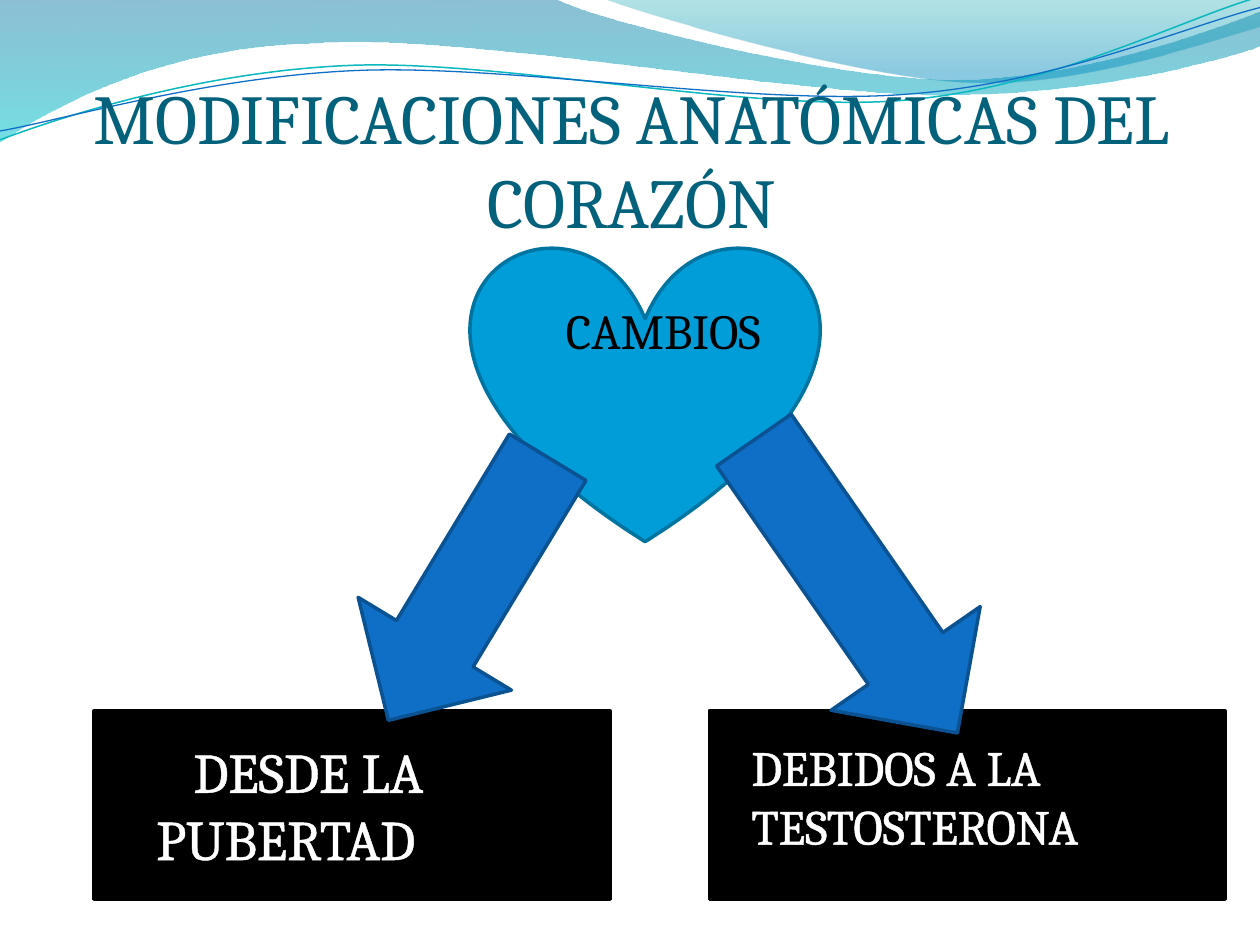
from lxml import etree
from pptx import Presentation
from pptx.dml import color as dml
from pptx.enum import shapes, text
from pptx.oxml import ns
from pptx.util import Cm, Pt

FONT = "Cambria"
HUES = {
    "title": "04617B", "heart": "009DD9", "rim": "0074A1",
    "arrow": "0F6FC6", "edge": "0B5292", "black": "000000",
    "white": "FFFFFF", "teal": "0AB8BF", "aqua": "00C6CF",
    "sea": "00A1A9", "sky": "008BBF",
}
SHAPE = shapes.MSO_SHAPE

BAND = [(0, 0), (4.4, -0.01), (4.76, 0.17, 6.64, 0.63, 7.58, 0.63),
        (8.53, 0.63, 9.58, 0.26, 10, 0.09), (10.01, 0.36),
        (9.83, 0.44, 8.7, 0.76, 7.46, 0.75),
        (6.22, 0.75, 3.82, 0.28, 2.57, 0.34),
        (1.29, 0.36, 0.46, 0.83, -0.01, 1.13), (0, 0)]
CREST = [(4.79, -0.01), (5.09, 0.11, 6.82, 0.62, 7.69, 0.65),
         (8.56, 0.69, 9.61, 0.32, 10, 0.21), (10, 0), (4.79, -0.01)]
HIGH = [(0, 1.11), (0.48, 0.93, 1.58, 0.57, 2.77, 0.52),
        (3.95, 0.47, 5.93, 0.89, 7.13, 0.8),
        (8.33, 0.71, 9.38, 0.15, 9.98, -0.02)]
LOW = [(0, 1.04), (0.47, 0.96, 1.64, 0.61, 2.83, 0.56),
       (4.03, 0.51, 5.97, 0.84, 7.17, 0.75),
       (8.36, 0.67, 9.41, 0.21, 10, 0.06)]


def rgb(name):
    return dml.RGBColor.from_string(HUES[name])


def bend(wave, parts):
    lines = iter(list(wave._element.iter(ns.qn("a:lnTo"))))
    for part in parts[1:]:
        first = next(lines)
        if len(part) == 6:
            first.tag = ns.qn("a:cubicBezTo")
            for _ in range(2):
                line = next(lines)
                first.append(line[0])
                line.getparent().remove(line)


def add_wave(slide, parts, close):
    dots = [(Cm(part[i] * 2.54), Cm(part[i + 1] * 2.54))
            for part in parts for i in range(0, len(part), 2)]
    pen = slide.shapes.build_freeform(*dots[0])
    pen.add_line_segments(dots[1:], close=close)
    wave = pen.convert_to_shape()
    bend(wave, parts)
    wave.shadow.inherit = False
    return wave


def add_band(slide, parts, stops):
    band = add_wave(slide, parts, True)
    band.line.fill.background()
    band.fill.gradient()
    band.fill.gradient_angle = 270
    for stop, (spot, hue, _) in zip(band.fill.gradient_stops, stops):
        stop.position = spot
        stop.color.rgb = rgb(hue)
    tints = band._element.spPr.iter(ns.qn("a:srgbClr"))
    for tint, (_, _, alpha) in zip(tints, stops):
        etree.SubElement(tint, ns.qn("a:alpha")).set("val", str(alpha * 1000))


def add_curve(slide, parts, hue, width):
    curve = add_wave(slide, parts, False)
    curve.fill.background()
    curve.line.color.rgb = rgb(hue)
    curve.line.width = Pt(width)


def add_form(slide, kind, box, fill, line, turn=0):
    form = slide.shapes.add_shape(kind, *map(Cm, box))
    form.shadow.inherit = False
    form.fill.solid()
    form.fill.fore_color.rgb = rgb(fill)
    form.line.color.rgb = rgb(line)
    form.line.width = Pt(2)
    form.rotation = turn


def set_font(para, size, hue):
    para.font.name = FONT
    para.font.size = Pt(size)
    para.font.color.rgb = rgb(hue)


def add_label(slide, words, box, size, hue, indent=0, rim=False):
    frame = slide.shapes.add_textbox(*map(Cm, box)).text_frame
    frame.word_wrap = True
    para = frame.paragraphs[0]
    run = para.add_run()
    run.text = words
    set_font(para, size, hue)
    if indent:
        para._p.get_or_add_pPr().set("indent", str(Cm(indent)))
    if rim:
        line = etree.Element(ns.qn("a:ln"), w=str(Pt(1.45)))
        fill = etree.SubElement(line, ns.qn("a:solidFill"))
        etree.SubElement(fill, ns.qn("a:srgbClr"), val=HUES[hue])
        run._r.get_or_add_rPr().insert(0, line)


def set_title(slide, words, box):
    title = slide.shapes.title
    title.left, title.top, title.width, title.height = map(Cm, box)
    frame = title.text_frame
    frame.text = words
    frame.word_wrap = True
    frame.auto_size = text.MSO_AUTO_SIZE.NONE
    frame.vertical_anchor = text.MSO_ANCHOR.BOTTOM
    frame.margin_left = frame.margin_right = frame.margin_bottom = 0
    para = frame.paragraphs[0]
    para.alignment = text.PP_ALIGN.CENTER
    set_font(para, 40, "title")
    slide.shapes._spTree.append(title._element)


def main():
    deck = Presentation()
    deck.slide_width, deck.slide_height = Cm(25.4), Cm(19.05)
    slide = deck.slides.add_slide(deck.slide_layouts[5])

    add_band(slide, BAND, [(0, "rim", 45), (1, "aqua", 55)])
    add_band(slide, CREST, [(0, "sea", 30), (0.8, "sky", 45)])
    add_curve(slide, HIGH, "teal", 0.85)
    add_curve(slide, LOW, "arrow", 0.75)
    set_title(slide, "MODIFICACIONES ANATÓMICAS DEL CORAZÓN",
              (1.3, 1.71, 22.86, 3.18))

    add_form(slide, SHAPE.HEART, (9.5, 4.93, 7.01, 5.99), "heart", "rim")
    add_label(slide, "CAMBIOS", (10.31, 5.93, 5.59, 2.64), 28, "black", 0.85)
    for left in (1.9, 14.3):
        add_form(slide, SHAPE.RECTANGLE, (left, 14.33, 10.4, 3.8),
                 "black", "black")
        if left < 10:
            add_label(slide, "DESDE LA PUBERTAD", (2.9, 14.73, 7.59, 3),
                      32, "white", 0.75, True)
    for box, turn in (((15.42, 8.23, 3.66, 7.19), 325.2),
                      ((7.63, 8.77, 3.61, 6.2), 31.2)):
        add_form(slide, SHAPE.DOWN_ARROW, box, "arrow", "edge", turn)
    add_label(slide, "DEBIDOS A LA TESTOSTERONA", (14.9, 14.73, 8.79, 2.64),
              28, "white", rim=True)
    deck.save("out.pptx")


if __name__ == "__main__":
    main()
